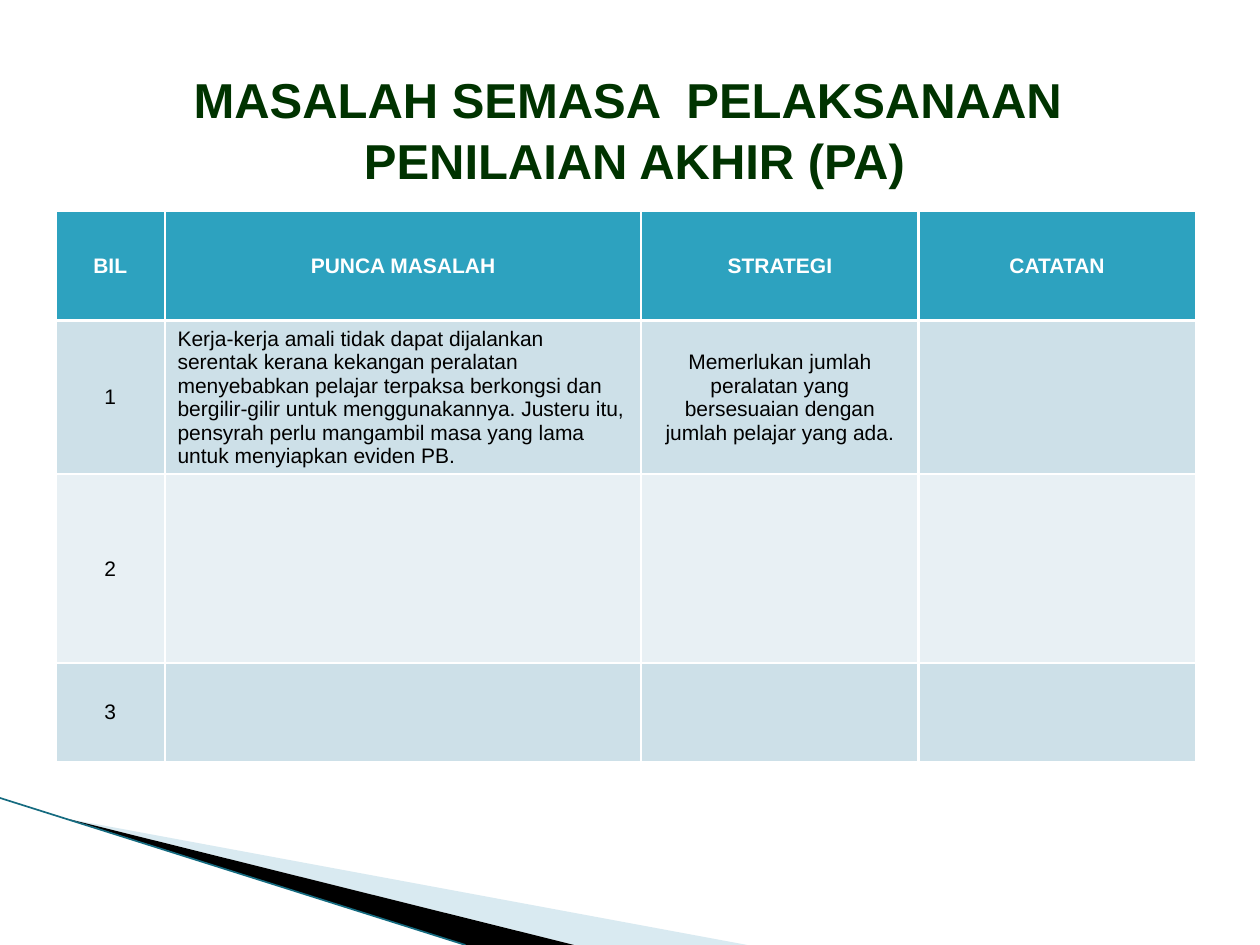
from lxml.etree import SubElement
from pptx import Presentation
from pptx.dml.color import RGBColor
from pptx.enum.shapes import MSO_CONNECTOR as Connector
from pptx.enum.text import MSO_ANCHOR as Anchor, MSO_AUTO_SIZE as AutoSize, PP_ALIGN as Align
from pptx.oxml.ns import qn
from pptx.util import Pt

FONT = "Arial"
WHITE = RGBColor(0xFF, 0xFF, 0xFF)
BLACK = RGBColor(0x00, 0x00, 0x00)
DARK_GREEN = RGBColor(0x00, 0x33, 0x00)
TEAL = RGBColor(0x2D, 0xA2, 0xBF)
DARK_TEAL = RGBColor(0x15, 0x6B, 0x80)
PALE_BLUE = RGBColor(0xA0, 0xCB, 0xDC)
BAND_DARK = RGBColor(0xCD, 0xE0, 0xE8)
BAND_LIGHT = RGBColor(0xE8, 0xF0, 0xF4)

COLUMN_WIDTHS = [62.6, 272.2, 158.4, 158.4]
ROW_HEIGHTS = [62.6, 64.8, 108, 56.2]
ROWS = [
    ["BIL", "PUNCA MASALAH", "STRATEGI", "CATATAN"],
    [
        "1",
        "Kerja-kerja amali tidak dapat dijalankan serentak kerana kekangan peralatan "
        "menyebabkan pelajar terpaksa berkongsi dan bergilir-gilir untuk menggunakannya. "
        "Justeru itu, pensyrah perlu mangambil masa yang lama untuk menyiapkan eviden PB.",
        "Memerlukan jumlah peralatan yang bersesuaian dengan jumlah pelajar yang ada.",
        "",
    ],
    ["2", "", "", ""],
    ["3", "", "", ""],
]


def style_font(font, size, color, bold):
    font.name = FONT
    font.size = Pt(size)
    font.bold = bold
    font.color.rgb = color


def add_wedge(page, points, color, opacity=100):
    builder = page.shapes.build_freeform(*points[0], scale=Pt(1))
    builder.add_line_segments(points[1:], close=True)
    wedge = builder.convert_to_shape()
    wedge.shadow.inherit = False
    wedge.line.fill.background()
    wedge.fill.solid()
    wedge.fill.fore_color.rgb = color
    if opacity < 100:
        tint = wedge.fill._xPr.find(".//" + qn("a:srgbClr"))
        SubElement(tint, qn("a:alpha"), val=str(opacity * 1000))


def add_corner_sweep(page, left, top, width, height):
    bottom = top + height
    start = (left + 39, top + 12.2)
    add_wedge(page, [start, (left + width, bottom), (left + 328, bottom)], PALE_BLUE, 40)
    add_wedge(page, [start, (left + 328, bottom), (left + 266, bottom)], BLACK)
    edge = page.shapes.add_connector(
        Connector.STRAIGHT, Pt(left), Pt(top), Pt(left + 266), Pt(bottom)
    )
    edge.line.color.rgb = DARK_TEAL
    edge.line.width = Pt(0.95)
    SubElement(edge._element.spPr, qn("a:effectLst"))


def place_title(page, left, top, width, height):
    title = page.shapes.title
    title.left, title.top, title.width, title.height = map(Pt, (left, top, width, height))
    frame = title.text_frame
    frame.word_wrap = True
    frame.auto_size = AutoSize.NONE
    frame.vertical_anchor = Anchor.MIDDLE
    frame.margin_top = Pt(8)
    frame.text = "MASALAH SEMASA  PELAKSANAAN \vPENILAIAN AKHIR (PA)"
    para = frame.paragraphs[0]
    para.alignment = Align.CENTER
    para.line_spacing = 1.04
    style_font(para.font, 28, DARK_GREEN, True)


def add_borders(cell):
    properties = cell._tc.get_or_add_tcPr()
    for side in ("lnL", "lnR", "lnT", "lnB"):
        border = SubElement(properties, qn("a:" + side), w=str(Pt(1.5)))
        fill = SubElement(border, qn("a:solidFill"))
        SubElement(fill, qn("a:srgbClr"), val=str(WHITE))


def add_problem_table(page, left, top, width, height):
    frame = page.shapes.add_table(
        len(ROWS), len(COLUMN_WIDTHS), Pt(left), Pt(top), Pt(width), Pt(height)
    )
    table = frame.table
    for column, column_width in zip(table.columns, COLUMN_WIDTHS):
        column.width = Pt(column_width)
    for row, row_height in zip(table.rows, ROW_HEIGHTS):
        row.height = Pt(row_height)
    for row_index, texts in enumerate(ROWS):
        header = row_index == 0
        band = TEAL if header else BAND_DARK if row_index % 2 else BAND_LIGHT
        for column_index, text in enumerate(texts):
            cell = table.cell(row_index, column_index)
            add_borders(cell)
            cell.fill.solid()
            cell.fill.fore_color.rgb = band
            cell.vertical_anchor = Anchor.MIDDLE
            cell.text = text
            para = cell.text_frame.paragraphs[0]
            cause = column_index == 1 and not header
            para.alignment = Align.LEFT if cause else Align.CENTER
            style_font(para.font, 12, WHITE if header else BLACK, header)


def main():
    deck = Presentation()
    deck.slide_width, deck.slide_height = Pt(720), Pt(540)
    page = deck.slides.add_slide(deck.slide_layouts[5])
    add_corner_sweep(page, 0, 456, 427, 84)
    place_title(page, 31, 31.7, 663, 79.2)
    add_problem_table(page, 31.7, 120.6, sum(COLUMN_WIDTHS), sum(ROW_HEIGHTS))
    deck.save("out.pptx")


if __name__ == "__main__":
    main()
